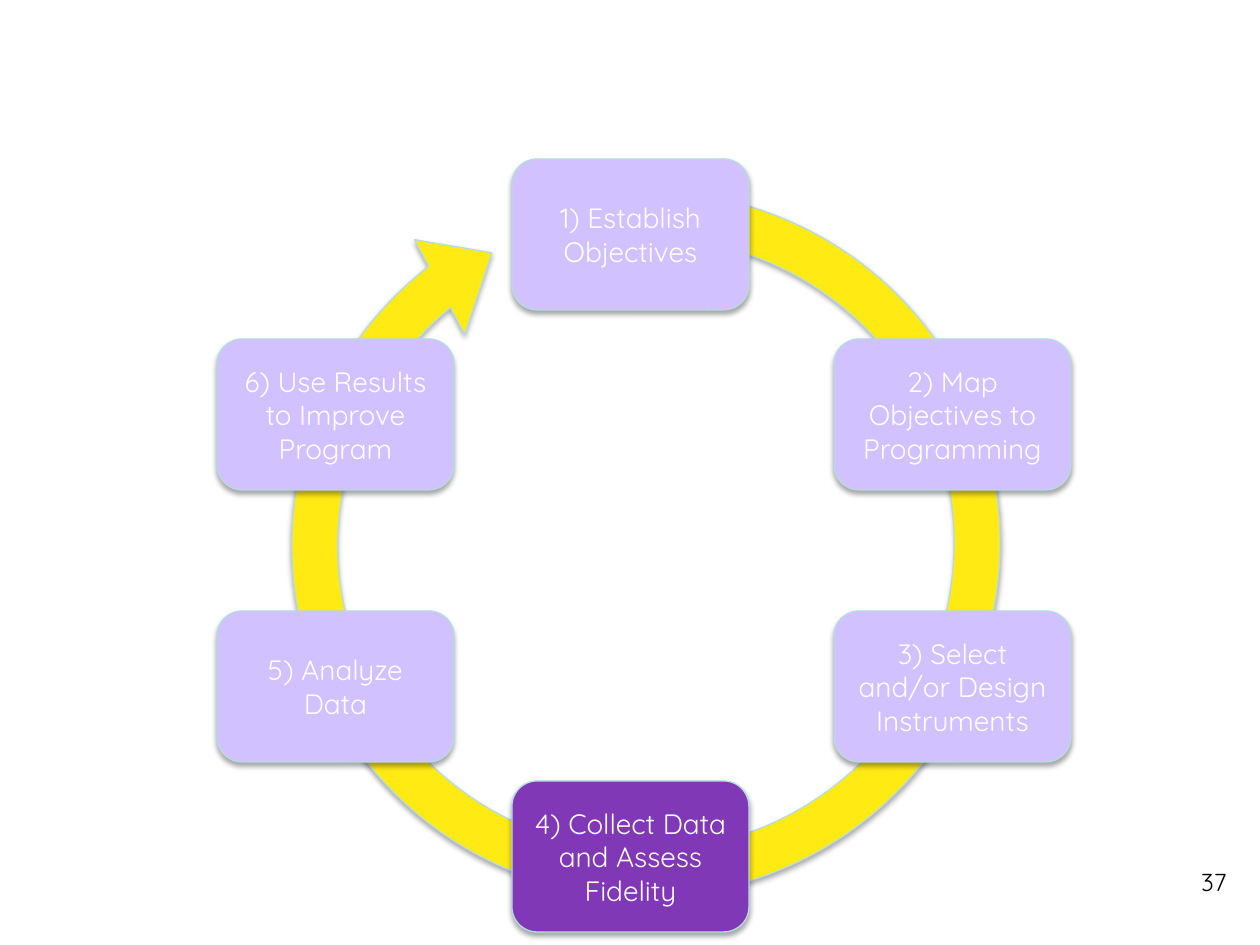
import dataclasses

import lxml.etree
import pptx
import pptx.dml.color
import pptx.enum.shapes
import pptx.enum.text
import pptx.oxml.ns
import pptx.util

SHAPE = pptx.enum.shapes.MSO_SHAPE
ALIGN = pptx.enum.text.PP_ALIGN
ANCHOR = pptx.enum.text.MSO_ANCHOR
SCALE = 914400 / 126


@dataclasses.dataclass(frozen=True)
class Theme:
    font: str = "Quicksand"
    step: str = "D2C1FF"
    active: str = "8038B6"
    ring: str = "FFEA14"
    edge: str = "B6DCDF"
    light: str = "FFFFFF"
    dark: str = "000000"
    label: int = 16
    number: int = 14


THEME = Theme()
LEFT, MID, RIGHT = 217, 512, 834
TOP, UPPER, LOWER, BASE = 159, 339, 611, 781
WIDTH, HEIGHT = 237, 151
STEPS = [
    (MID, TOP, "1) Establish Objectives"),
    (RIGHT, UPPER, "2) Map Objectives to Programming"),
    (RIGHT, LOWER, "3) Select and/or Design Instruments"),
    (MID, BASE, "4) Collect Data and Assess Fidelity"),
    (LEFT, UPPER, "6) Use Results to Improve Program"),
    (LEFT, LOWER, "5) Analyze Data"),
]
ACTIVE = 3


def px(count):
    return pptx.util.Emu(round(count * SCALE))


def color(code):
    return pptx.dml.color.RGBColor.from_string(code)


def write(frame, text, size, code, align):
    frame.word_wrap = True
    para = frame.paragraphs[0]
    para.text = text
    para.alignment = align
    para.font.name = THEME.font
    para.font.size = pptx.util.Pt(size)
    para.font.color.rgb = color(code)


def shade(shape):
    shape.shadow.inherit = False
    qn = pptx.oxml.ns.qn
    effects = shape._element.spPr.find(qn("a:effectLst"))
    outer = lxml.etree.SubElement(
        effects,
        qn("a:outerShdw"),
        blurRad=str(pptx.util.Pt(3.1)),
        dist=str(pptx.util.Pt(1.8)),
        dir="5400000",
        rotWithShape="0",
    )
    tint = lxml.etree.SubElement(outer, qn("a:srgbClr"), val=THEME.dark)
    lxml.etree.SubElement(tint, qn("a:alpha"), val="35000")


def add_form(slide, kind, box, fill):
    shape = slide.shapes.add_shape(kind, *map(px, box))
    shape.fill.solid()
    shape.fill.fore_color.rgb = color(fill)
    shape.line.color.rgb = color(THEME.edge)
    shape.line.width = pptx.util.Pt(0.75)
    shade(shape)
    return shape


def add_ring(slide):
    ring = add_form(slide, SHAPE.CIRCULAR_ARROW, (263, 159, 766, 770), THEME.ring)
    ring.rotation = 250.3
    for index, value in enumerate((0.06, 6.54, 204.56, 3.22, 0.07)):
        ring.adjustments[index] = value


def add_step(slide, left, top, text, fill):
    box = (left, top, WIDTH, HEIGHT)
    step = add_form(slide, SHAPE.ROUNDED_RECTANGLE, box, fill)
    step.text_frame.vertical_anchor = ANCHOR.MIDDLE
    write(step.text_frame, text, THEME.label, THEME.light, ALIGN.CENTER)


def add_number(slide, text):
    box = slide.shapes.add_textbox(*map(px, (945, 861, 294, 66)))
    write(box.text_frame, text, THEME.number, THEME.dark, ALIGN.RIGHT)


def main():
    deck = pptx.Presentation()
    deck.slide_width, deck.slide_height = px(1260), px(945)
    slide = deck.slides.add_slide(deck.slide_layouts[6])
    add_number(slide, "37")
    add_ring(slide)
    for index, (left, top, text) in enumerate(STEPS):
        fill = THEME.active if index == ACTIVE else THEME.step
        add_step(slide, left, top, text, fill)
    deck.save("out.pptx")


if __name__ == "__main__":
    main()
